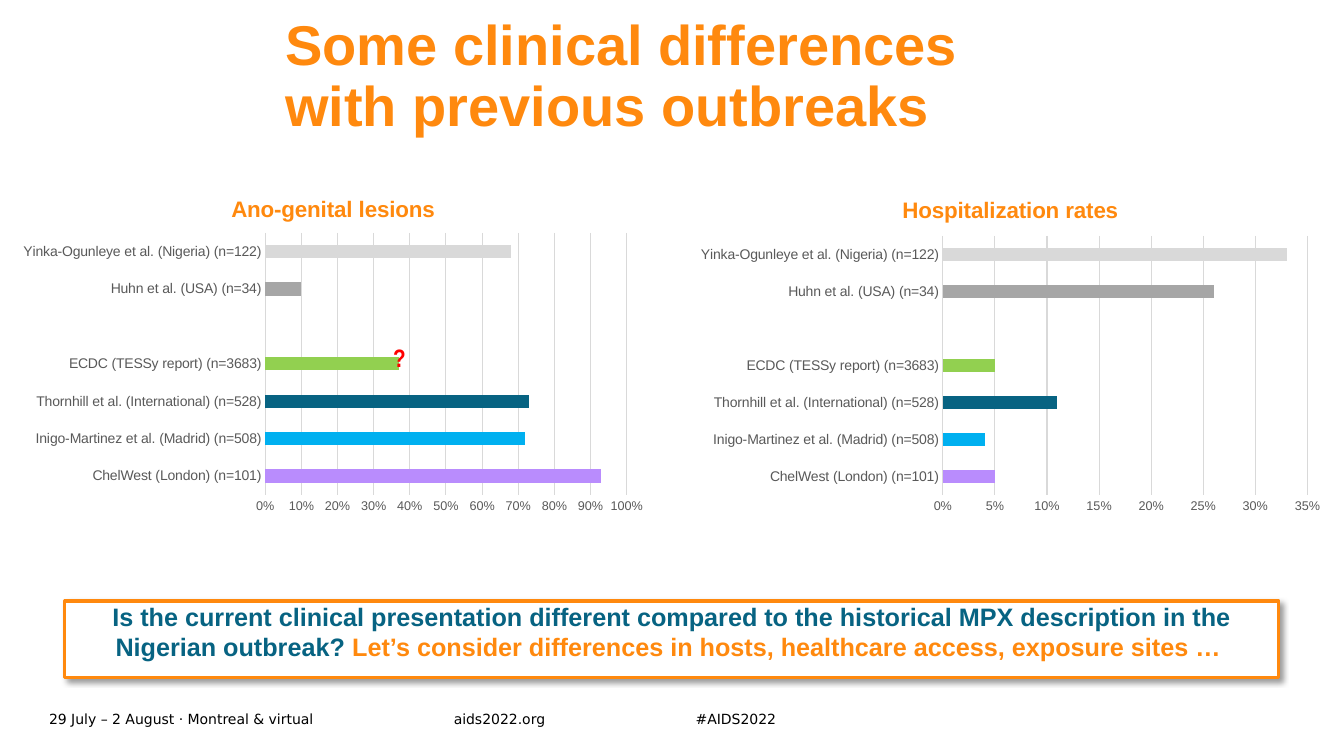
from lxml import etree
from pptx import Presentation
from pptx.chart.data import CategoryChartData
from pptx.dml.color import RGBColor
from pptx.enum.chart import XL_CHART_TYPE, XL_TICK_MARK
from pptx.enum.shapes import MSO_SHAPE
from pptx.enum.text import MSO_ANCHOR, PP_ALIGN
from pptx.oxml import parse_xml
from pptx.oxml.ns import nsdecls, qn
from pptx.util import Inches, Pt

SLIDE_WIDTH, SLIDE_HEIGHT = Inches(13.33), Inches(7.5)

ORANGE = RGBColor(0xFF, 0x89, 0x0E)
TEAL = RGBColor(0x07, 0x63, 0x82)
PURPLE = RGBColor(0xB9, 0x8C, 0xFD)
BLUE = RGBColor(0x00, 0xB0, 0xF0)
GREEN = RGBColor(0x92, 0xD0, 0x50)
MID_GREY = RGBColor(0xA6, 0xA6, 0xA6)
PALE_GREY = RGBColor(0xD9, 0xD9, 0xD9)
DARK_GREY = RGBColor(0x59, 0x59, 0x59)
RED = RGBColor(0xFF, 0x00, 0x00)
BLACK = RGBColor(0x00, 0x00, 0x00)
WHITE = RGBColor(0xFF, 0xFF, 0xFF)

# Each study with its bar colour, from the bottom bar up
STUDIES = {
    "ChelWest (London) (n=101)": PURPLE,
    "Inigo-Martinez et al. (Madrid) (n=508)": BLUE,
    "Thornhill et al. (International) (n=528)": TEAL,
    "ECDC (TESSy report) (n=3683)": GREEN,
    "": None,
    "Huhn et al. (USA) (n=34)": MID_GREY,
    "Yinka-Ogunleye et al. (Nigeria) (n=122)": PALE_GREY,
}

TITLE_FONT = {"name": "Arial", "size": Pt(40), "bold": True}
HEADING_FONT = {"name": "Arial", "size": Pt(16), "bold": True}
CALLOUT_FONT = {"name": "Arial", "size": Pt(18), "bold": True}
QUESTION_FONT = {"name": "Arial Narrow", "size": Pt(18), "bold": True}
FOOTER_FONT = {"name": "DejaVu Sans", "size": Pt(10)}
STUDY_FONT = {"name": "Arial", "size": Pt(10), "bold": False}
SCALE_FONT = {"name": "Arial", "size": Pt(9), "bold": False}
NO_MARGINS = {f"margin_{side}": 0 for side in ("left", "top", "right", "bottom")}


def set_all(target, values):
    for name, value in values.items():
        setattr(target, name, value)


def set_font(font, values, color):
    set_all(font, values)
    font.color.rgb = color


def set_line(line, color, width):
    line.color.rgb = color
    line.width = Pt(width)


def place(left, top, width, height):
    """Turn percentages of the slide into a position and a size."""
    return (int(SLIDE_WIDTH * left / 100), int(SLIDE_HEIGHT * top / 100),
            int(SLIDE_WIDTH * width / 100), int(SLIDE_HEIGHT * height / 100))


def add_text(slide, box, text, font, color, **frame_format):
    frame = slide.shapes.add_textbox(*place(*box)).text_frame
    set_all(frame, {"word_wrap": True, **frame_format})
    paragraph = frame.paragraphs[0]
    paragraph.text = text
    for run in paragraph.runs:
        set_font(run.font, font, color)
    return paragraph


def manual_layout(parent, **percents):
    """Fix a chart part at percentages of the chart area."""
    for old in parent.findall(qn("c:layout")):
        parent.remove(old)
    layout = etree.Element(qn("c:layout"))
    manual = etree.SubElement(layout, qn("c:manualLayout"))
    settings = {"xMode": "edge", "yMode": "edge"}
    if "w" in percents:
        settings = {"layoutTarget": "inner", **settings}
    settings.update({tag: percent / 100 for tag, percent in percents.items()})
    for tag, value in settings.items():
        etree.SubElement(manual, qn(f"c:{tag}")).set("val", str(value))
    text = parent.find(qn("c:tx"))
    if text is None:
        parent.insert(0, layout)
    else:
        text.addnext(layout)


def add_rate_chart(slide, left, heading, series_name, rates, top_rate, step,
                   heading_place, plot):
    data = CategoryChartData(number_format="0%")
    data.categories = list(STUDIES)
    data.add_series(series_name, rates)
    chart = slide.shapes.add_chart(XL_CHART_TYPE.BAR_CLUSTERED,
                                   *place(left, 23.73, 48.01, 45.07), data).chart
    set_font(chart.font, STUDY_FONT, BLACK)
    chart.has_legend = False

    # Heading
    chart.has_title = True
    chart.chart_title.include_in_layout = False
    title = chart.chart_title.text_frame.paragraphs[0]
    title.text = heading
    set_font(title.runs[0].font, HEADING_FONT, ORANGE)
    manual_layout(chart.chart_title._element, **heading_place)

    # Axes
    studies, scale = chart.category_axis, chart.value_axis
    no_ticks = {"major_tick_mark": XL_TICK_MARK.NONE,
                "minor_tick_mark": XL_TICK_MARK.NONE}
    for axis, font in ((studies, STUDY_FONT), (scale, SCALE_FONT)):
        set_all(axis, no_ticks)
        set_font(axis.tick_labels.font, font, DARK_GREY)
    set_line(studies.format.line, PALE_GREY, 0.75)
    set_all(scale, {"minimum_scale": 0, "maximum_scale": top_rate,
                    "major_unit": step, "has_major_gridlines": True})
    set_all(scale.tick_labels, {"number_format": "0%",
                                "number_format_is_linked": False})
    set_line(scale.major_gridlines.format.line, PALE_GREY, 0.75)
    scale.format.line.fill.background()

    # Bars
    bars = chart.plots[0]
    set_all(bars, {"gap_width": 182, "vary_by_categories": False})
    series = bars.series[0]
    series.format.fill.solid()
    series.format.fill.fore_color.rgb = TEAL
    for index, color in enumerate(STUDIES.values()):
        if color not in (None, TEAL):
            fill = series.points[index].format.fill
            fill.solid()
            fill.fore_color.rgb = color
    manual_layout(chart._chartSpace.chart.plotArea, **plot)


def add_callout(slide, box, parts):
    callout = slide.shapes.add_shape(MSO_SHAPE.RECTANGLE, *place(*box))
    callout.fill.solid()
    callout.fill.fore_color.rgb = WHITE
    set_line(callout.line, ORANGE, 2.25)
    callout.shadow.inherit = False
    callout._element.spPr.find(qn("a:effectLst")).append(parse_xml(
        f'<a:outerShdw {nsdecls("a")} blurRad="{Pt(4)}" dist="{Pt(3)}" '
        'dir="2700000" algn="tl" rotWithShape="0"><a:srgbClr val="000000">'
        '<a:alpha val="40000"/></a:srgbClr></a:outerShdw>'))
    frame = callout.text_frame
    set_all(frame, {"word_wrap": True, "vertical_anchor": MSO_ANCHOR.TOP,
                    **NO_MARGINS})
    paragraph = frame.paragraphs[0]
    set_all(paragraph, {"alignment": PP_ALIGN.CENTER, "space_after": Pt(12)})
    for text, color in parts:
        run = paragraph.add_run()
        run.text = text
        set_font(run.font, CALLOUT_FONT, color)


def main():
    presentation = Presentation()
    set_all(presentation, {"slide_width": SLIDE_WIDTH, "slide_height": SLIDE_HEIGHT})
    slide = presentation.slides.add_slide(presentation.slide_layouts[6])

    # Footer
    for left, width, text in ((3.65, 30.1, "29 July – 2 August · Montreal & virtual"),
                              (33.76, 14.48, "aids2022.org"),
                              (51.76, 14.48, "#AIDS2022")):
        add_text(slide, (left, 93.5, width, 3.2), text, FOOTER_FONT, BLACK,
                 vertical_anchor=MSO_ANCHOR.MIDDLE, **NO_MARGINS)

    # Title
    title = add_text(slide, (21.23, 6.18, 74.57, 12.13),
                     "Some clinical differences \vwith previous outbreaks",
                     TITLE_FONT, ORANGE,
                     vertical_anchor=MSO_ANCHOR.BOTTOM, **NO_MARGINS)
    title.line_spacing = 0.9

    # Charts, with the open question over the ECDC bar
    add_rate_chart(slide, 0.83, "Ano-genital lesions", "Series 1",
                   (0.93, 0.72, 0.73, 0.37, None, 0.1, 0.68), 1, 0.1,
                   {"x": 33.5, "y": 3.4},
                   {"x": 39.4, "y": 15.7, "w": 56, "h": 76.9})
    add_text(slide, (28.51, 44.67, 3.15, 5.33), "?", QUESTION_FONT, RED)
    add_rate_chart(slide, 51.24, "Hospitalization rates", "Hospitalization rates",
                   (0.05, 0.04, 0.11, 0.05, None, 0.26, 0.33), 0.35, 0.05,
                   {"x": 32.5, "y": 3.7},
                   {"x": 39.4, "y": 16.6, "w": 56.5, "h": 76})

    # Closing question
    add_callout(slide, (4.83, 79.5, 90.32, 10.13), (
        ("Is the current clinical presentation different compared to the "
         "historical MPX description in the Nigerian outbreak? ", TEAL),
        ("Let’s consider differences in hosts, healthcare access, "
         "exposure sites … ", ORANGE)))

    presentation.save("out.pptx")


if __name__ == "__main__":
    main()
